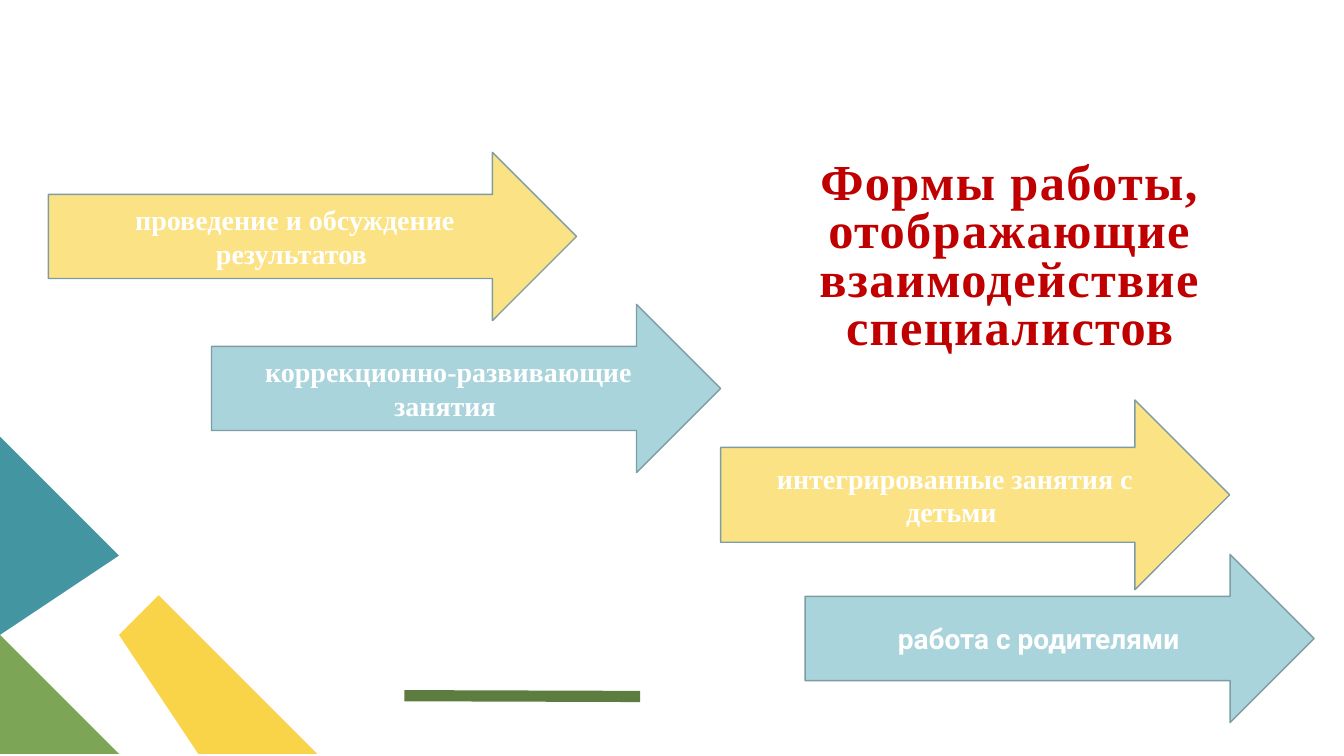
import dataclasses

import pptx
import pptx.dml.color
import pptx.enum.shapes
import pptx.enum.text
import pptx.util
from lxml import etree
from pptx.oxml.ns import qn

Cm = pptx.util.Cm
Pt = pptx.util.Pt


@dataclasses.dataclass(frozen=True)
class Theme:
    yellow: str = "F9D448"
    green: str = "7CA655"
    teal: str = "4495A2"
    rule: str = "5D7D40"
    title: str = "C00000"
    pale_yellow: str = "FBE284"
    pale_teal: str = "A9D4DB"
    outline: str = "7D9DA2"
    label: str = "FFFFFF"
    serif: str = "Times New Roman"
    sans: str = "Roboto"
    title_size: int = 36
    label_size: int = 20


THEME = Theme()
SLIDE_SIZE = (33.87, 19.05)


def rgb(value):
    return pptx.dml.color.RGBColor.from_string(value)


def write_text(frame, text, *, font, size, color, anchor, spacing=0, line_spacing=None):
    frame.word_wrap = True
    frame.vertical_anchor = anchor
    para = frame.paragraphs[0]
    para.alignment = pptx.enum.text.PP_ALIGN.CENTER
    para.line_spacing = line_spacing
    span = para.add_run()
    span.text = text
    span.font.name = font
    span.font.size = Pt(size)
    span.font.bold = True
    span.font.color.rgb = rgb(color)
    if spacing:
        span.font._element.set("spc", str(spacing * 100))


def add_polygon(page, points, color):
    builder = page.shapes.build_freeform(*points[0], scale=Cm(1))
    builder.add_line_segments(points[1:], close=True)
    polygon = builder.convert_to_shape()
    polygon.shadow.inherit = False
    polygon.fill.solid()
    polygon.fill.fore_color.rgb = rgb(color)
    polygon.line.fill.background()


def add_corner(page, left, top, width, height):
    right, bottom = left + width, top + height
    side = 2.69
    band = 1.37
    add_polygon(page, [(right, bottom), (right - 2 * band, bottom),
                       (left + side, bottom - 2.77),
                       (left + side + band, bottom - 2.77 - band)], THEME.yellow)
    add_polygon(page, [(left + side, bottom), (left, bottom),
                       (left, bottom - side)], THEME.green)
    add_polygon(page, [(left, top), (left + side, top + side),
                       (left, top + 2 * side)], THEME.teal)


def add_rule(page, left, top, width, height):
    rule = page.shapes.add_connector(
        pptx.enum.shapes.MSO_CONNECTOR.STRAIGHT,
        Cm(left), Cm(top), Cm(left + width), Cm(top + height))
    rule.line.color.rgb = rgb(THEME.rule)
    rule.line.width = Pt(8)
    etree.SubElement(rule._element.spPr, qn("a:effectLst"))


def add_title(page, left, top, width, height):
    box = page.shapes.add_textbox(Cm(left), Cm(top), Cm(width), Cm(height))
    frame = box.text_frame
    frame.margin_left = frame.margin_right = 0
    frame.margin_top = frame.margin_bottom = 0
    write_text(frame, "Формы работы, отображающие взаимодействие специалистов",
               font=THEME.serif, size=THEME.title_size, color=THEME.title,
               anchor=pptx.enum.text.MSO_ANCHOR.BOTTOM, spacing=1, line_spacing=0.8)


def add_arrow(page, left, top, width, height, *, text, fill, font):
    arrow = page.shapes.add_shape(
        pptx.enum.shapes.MSO_SHAPE.RIGHT_ARROW,
        Cm(left), Cm(top), Cm(width), Cm(height))
    arrow.shadow.inherit = False
    arrow.fill.solid()
    arrow.fill.fore_color.rgb = rgb(fill)
    arrow.line.color.rgb = rgb(THEME.outline)
    arrow.line.width = Pt(1)
    write_text(arrow.text_frame, text, font=font, size=THEME.label_size,
               color=THEME.label, anchor=pptx.enum.text.MSO_ANCHOR.MIDDLE)


def build_page(page):
    add_corner(page, 0, 10.85, 8.23, 8.2)
    add_rule(page, 10.19, 17.53, 5.94, 0.02)
    add_title(page, 17.04, 6.05, 16.82, 2.9)
    arrows = [
        ((1.22, 3.84, 13.31, 4.24), " проведение и обсуждение результатов", THEME.serif),
        ((5.33, 7.67, 12.83, 4.24), " коррекционно-развивающие занятия", THEME.serif),
        ((18.16, 10.08, 12.83, 4.78), " интегрированные занятия с детьми", THEME.serif),
        ((20.29, 13.97, 12.83, 4.24), "работа с родителями", THEME.sans),
    ]
    fills = (THEME.pale_yellow, THEME.pale_teal)
    for index, (place, text, font) in enumerate(arrows):
        add_arrow(page, *place, text=text, fill=fills[index % 2], font=font)


def main():
    deck = pptx.Presentation()
    deck.slide_width, deck.slide_height = map(Cm, SLIDE_SIZE)
    build_page(deck.slides.add_slide(deck.slide_layouts[6]))
    deck.save("out.pptx")


if __name__ == "__main__":
    main()
